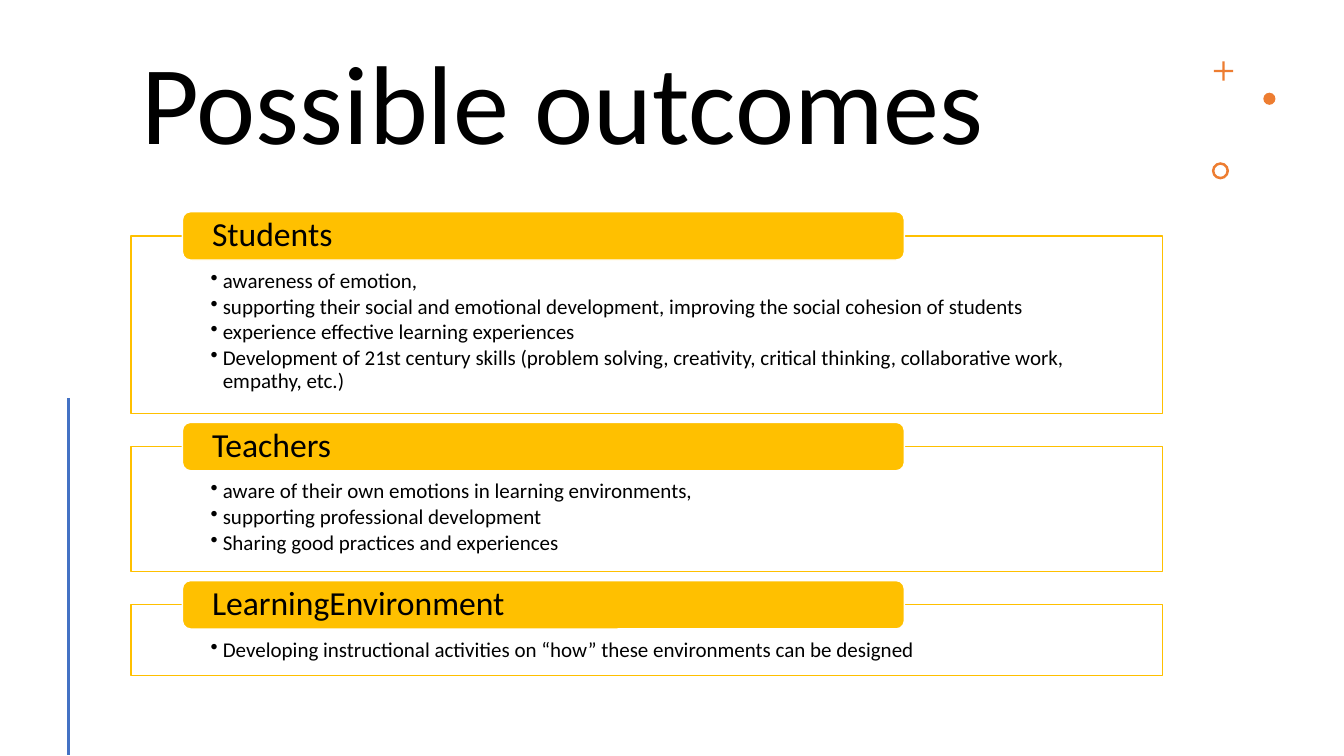
from dataclasses import dataclass

import lxml.etree
import pptx
import pptx.dml.color
import pptx.enum.shapes
import pptx.enum.text
import pptx.oxml.ns
import pptx.util

Inches = pptx.util.Inches
Pt = pptx.util.Pt
ShapeType = pptx.enum.shapes.MSO_SHAPE
Anchor = pptx.enum.text.MSO_ANCHOR
qn = pptx.oxml.ns.qn

COLORS = {
    "text": "000000",
    "white": "FFFFFF",
    "gold": "FFC000",
    "orange": "ED7D31",
    "blue": "4472C4",
}
FONT = "Calibri"
PANEL_LEFT, PANEL_WIDTH = 1.3, 10.23
HEADER_LEFT, HEADER_WIDTH, HEADER_HEIGHT = 1.81, 7.16, 0.48


@dataclass
class Outcome:
    heading: str
    top: float
    height: float
    points: list[str]


@dataclass
class Ornament:
    kind: ShapeType
    left: float
    top: float
    size: float
    adjustment: float | None = None


OUTCOMES = [
    Outcome("Students", 2.34, 1.76, [
        "awareness of emotion,",
        "supporting their social and emotional development, improving the social cohesion of students",
        "experience effective learning experiences",
        "Development of 21st century skills (problem solving, creativity, critical thinking, "
        "collaborative work, empathy, etc.)",
    ]),
    Outcome("Teachers", 4.43, 1.24, [
        "aware of their own emotions in learning environments,",
        "supporting professional development",
        "Sharing good practices and experiences",
    ]),
    Outcome("LearningEnvironment", 6, 0.7, [
        "Developing instructional activities on “how” these environments can be designed",
    ]),
]
ORNAMENTS = [
    Ornament(ShapeType.CROSS, 12.04, 0.61, 0.19, 0.44),
    Ornament(ShapeType.OVAL, 12.53, 0.92, 0.12),
    Ornament(ShapeType.DONUT, 12.02, 1.61, 0.17, 0.15),
]


def color(name: str) -> pptx.dml.color.RGBColor:
    return pptx.dml.color.RGBColor.from_string(COLORS[name])


def add_box(slide, kind: ShapeType, left: float, top: float, width: float,
            height: float, fill: str, line: str | None = None):
    shape = slide.shapes.add_shape(
        kind, Inches(left), Inches(top), Inches(width), Inches(height))
    shape.shadow.inherit = False
    shape.fill.solid()
    shape.fill.fore_color.rgb = color(fill)
    if line:
        shape.line.color.rgb = color(line)
        shape.line.width = Pt(1)
    else:
        shape.line.fill.background()
    return shape


def set_frame(frame, side: float, top: float, bottom: float, anchor: Anchor) -> None:
    frame.word_wrap = True
    frame.auto_size = pptx.enum.text.MSO_AUTO_SIZE.NONE
    frame.margin_left = frame.margin_right = Inches(side)
    frame.margin_top, frame.margin_bottom = Inches(top), Inches(bottom)
    frame.vertical_anchor = anchor


def write(paragraph, text: str, size: float) -> None:
    paragraph.alignment = pptx.enum.text.PP_ALIGN.LEFT
    paragraph.line_spacing = 0.9
    run = paragraph.add_run()
    run.text = text
    run.font.name = FONT
    run.font.size = Pt(size)
    run.font.color.rgb = color("text")


def add_bullet(paragraph) -> None:
    properties = paragraph._p.get_or_add_pPr()
    properties.set("marL", str(Inches(0.12)))
    properties.set("indent", str(-Inches(0.12)))
    bullet_color = lxml.etree.SubElement(properties, qn("a:buClr"))
    lxml.etree.SubElement(bullet_color, qn("a:srgbClr"), val=COLORS["text"])
    lxml.etree.SubElement(properties, qn("a:buChar"), char="•")


def add_outcome(slide, outcome: Outcome) -> None:
    # Outlined panel with its bullet points
    panel = add_box(slide, ShapeType.RECTANGLE, PANEL_LEFT, outcome.top,
                    PANEL_WIDTH, outcome.height, "white", "gold")
    fill_color = panel._element.spPr.find(qn("a:solidFill"))[0]
    lxml.etree.SubElement(fill_color, qn("a:alpha"), val="90000")
    frame = panel.text_frame
    set_frame(frame, 0.79, 0.34, 0.12, Anchor.TOP)
    for index, point in enumerate(outcome.points):
        paragraph = frame.add_paragraph() if index else frame.paragraphs[0]
        add_bullet(paragraph)
        paragraph.level = 1
        if index:
            paragraph.space_before = Pt(2.2)
        write(paragraph, point, 15)

    # Header centred on the panel's top edge
    header = add_box(slide, ShapeType.ROUNDED_RECTANGLE, HEADER_LEFT,
                     outcome.top - HEADER_HEIGHT / 2, HEADER_WIDTH,
                     HEADER_HEIGHT, "gold", "white")
    set_frame(header.text_frame, 0.27, 0, 0, Anchor.MIDDLE)
    write(header.text_frame.paragraphs[0], outcome.heading, 24)


def add_title(slide, text: str) -> None:
    title = slide.shapes.title
    title.left, title.top = Inches(PANEL_LEFT), Inches(0.42)
    title.width, title.height = Inches(PANEL_WIDTH), Inches(1.31)
    set_frame(title.text_frame, 0.1, 0.05, 0.05, Anchor.MIDDLE)
    write(title.text_frame.paragraphs[0], text, 80)


def add_side_line(slide) -> None:
    line = slide.shapes.add_connector(
        pptx.enum.shapes.MSO_CONNECTOR.STRAIGHT,
        Inches(0.68), Inches(3.95), Inches(0.68), Inches(7.49))
    line.line.color.rgb = color("blue")
    line.line.width = Pt(2)
    lxml.etree.SubElement(line._element.spPr, qn("a:effectLst"))


def main() -> None:
    presentation = pptx.Presentation()
    presentation.slide_width = Inches(13.33)
    presentation.slide_height = Inches(7.5)
    slide = presentation.slides.add_slide(presentation.slide_layouts[5])

    add_title(slide, "Possible outcomes")

    # Small ornaments at the top right
    for ornament in ORNAMENTS:
        shape = add_box(slide, ornament.kind, ornament.left, ornament.top,
                        ornament.size, ornament.size, "orange")
        if ornament.adjustment is not None:
            shape.adjustments[0] = ornament.adjustment

    add_side_line(slide)
    for outcome in OUTCOMES:
        add_outcome(slide, outcome)
    presentation.save("out.pptx")


if __name__ == "__main__":
    main()
